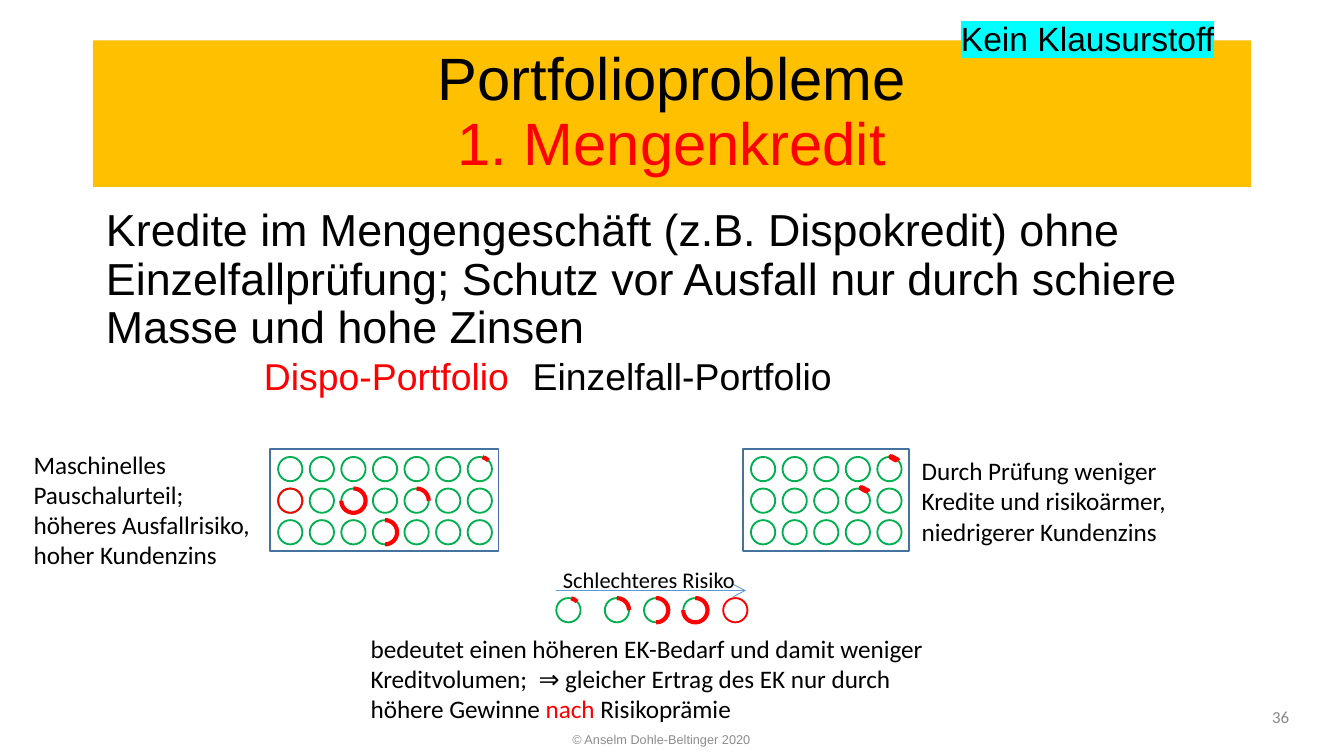
from dataclasses import dataclass
from math import cos, radians, sin

from lxml.etree import SubElement
from pptx import Presentation
from pptx.dml.color import RGBColor
from pptx.enum.shapes import MSO_CONNECTOR, MSO_SHAPE
from pptx.enum.text import MSO_ANCHOR, MSO_AUTO_SIZE, PP_ALIGN
from pptx.oxml.ns import qn
from pptx.util import Pt


@dataclass(frozen=True)
class Theme:
    black: str = "000000"
    red: str = "FF0000"
    green: str = "00B050"
    amber: str = "FFC000"
    cyan: str = "00FFFF"
    frame: str = "43739E"
    arrow: str = "5B9BD5"
    number: str = "898989"
    footer: str = "8C8C8C"
    heading: str = "Arial"
    body: str = "Calibri"
    title_size: float = 32
    lead_size: float = 24
    column_size: float = 20
    badge_size: float = 18
    note_size: float = 13.5
    legend_size: float = 12
    number_size: float = 9
    footer_size: float = 6.8


THEME = Theme()
LOAN = 13
PITCH = 16.92
GRID_TOP = 244.8
RISKS = {"tick": (-77, 32), "quarter": (-90, 90), "half": (-90, 180), "most": (-90, 270)}


class SlideBuilder:
    """Draws styled elements on the current slide, with all lengths in points."""

    def __init__(self, slide, theme):
        self.slide = slide
        self.theme = theme

    def style(self, shape, line=None, weight=1, fill=None):
        shape.shadow.inherit = False
        if fill:
            shape.fill.solid()
            shape.fill.fore_color.rgb = RGBColor.from_string(fill)
        else:
            shape.fill.background()
        if line:
            shape.line.color.rgb = RGBColor.from_string(line)
            shape.line.width = Pt(weight)
        else:
            shape.line.fill.background()
        return shape

    def preset(self, kind, box, **style):
        shape = self.slide.shapes.add_shape(kind, *map(Pt, box))
        return self.style(shape, **style)

    def stroke(self, points, weight):
        start, *rest = [(Pt(x), Pt(y)) for x, y in points]
        builder = self.slide.shapes.build_freeform(*start)
        builder.add_line_segments(rest, close=False)
        self.style(builder.convert_to_shape(), self.theme.red, weight)

    def loan(self, x, y, color):
        self.preset(MSO_SHAPE.OVAL, (x, y, LOAN, LOAN), line=color)

    def risk(self, x, y, level):
        if level == "default":
            self.loan(x, y, self.theme.red)
        elif level == "quarter":
            self.preset(MSO_SHAPE.ARC, (x, y, LOAN, LOAN), line=self.theme.red, weight=2.25)
        else:
            start, sweep = RISKS[level]
            radius = LOAN / 2
            steps = max(4, sweep // 10)
            angles = [radians(start + sweep * step / steps) for step in range(steps + 1)]
            self.stroke([(x + radius + radius * cos(angle), y + radius + radius * sin(angle))
                         for angle in angles], 2.25)

    def portfolio(self, left, columns, frame):
        self.preset(MSO_SHAPE.RECTANGLE, frame, line=self.theme.frame)
        for row in range(3):
            for column in range(columns):
                self.loan(left + column * PITCH, GRID_TOP + row * PITCH, self.theme.green)

    def run(self, paragraph, text, size, color, font, highlight=None):
        run = paragraph.add_run()
        run.text = text
        run.font.size = Pt(size)
        run.font.name = font
        run.font.color.rgb = RGBColor.from_string(color)
        if highlight:
            properties = run.font._element
            mark = SubElement(properties, qn("a:highlight"))
            SubElement(mark, qn("a:srgbClr")).set("val", highlight)
            properties.find(qn("a:solidFill")).addnext(mark)

    def text_box(self, box, grow=False, margins=True, anchor=MSO_ANCHOR.TOP):
        frame = self.slide.shapes.add_textbox(*map(Pt, box)).text_frame
        frame.word_wrap = True
        frame.vertical_anchor = anchor
        if grow:
            frame.auto_size = MSO_AUTO_SIZE.SHAPE_TO_FIT_TEXT
        if not margins:
            frame.margin_left = frame.margin_right = frame.margin_top = frame.margin_bottom = 0
        return frame

    def note(self, box, *runs, size=None, margins=True):
        paragraph = self.text_box(box, True, margins).paragraphs[0]
        for text, color in runs:
            self.run(paragraph, text, size or self.theme.note_size, color, self.theme.body)

    def footer(self, box, text, align, size, color, font):
        paragraph = self.text_box(box, anchor=MSO_ANCHOR.MIDDLE).paragraphs[0]
        paragraph.alignment = align
        self.run(paragraph, text, size, color, font)

    def title(self, box, first, second):
        shape = self.preset(MSO_SHAPE.RECTANGLE, box, fill=self.theme.amber)
        shape.text_frame.vertical_anchor = MSO_ANCHOR.MIDDLE
        paragraph = shape.text_frame.paragraphs[0]
        paragraph.alignment = PP_ALIGN.CENTER
        paragraph.line_spacing = 0.9
        self.run(paragraph, first, self.theme.title_size, self.theme.black, self.theme.heading)
        paragraph.add_line_break()
        self.run(paragraph, second, self.theme.title_size, self.theme.red, self.theme.heading)

    def lead(self, box, text, left_heading, right_heading):
        theme = self.theme
        frame = self.text_box(box)
        paragraph = frame.paragraphs[0]
        paragraph.line_spacing = 0.9
        paragraph.space_before = Pt(5.6)
        self.run(paragraph, text, theme.lead_size, theme.black, theme.heading)
        headings = frame.add_paragraph()
        headings.line_spacing = 0.9
        headings.space_before = Pt(2.8)
        properties = headings._p.get_or_add_pPr()
        properties.set("marL", str(Pt(84.6)))
        properties.set("indent", "0")
        tabs = SubElement(properties, qn("a:tabLst"))
        SubElement(tabs, qn("a:tab"), pos=str(Pt(327.2)), algn="l")
        self.run(headings, left_heading, theme.column_size, theme.red, theme.heading)
        self.run(headings, "\t" + right_heading, theme.column_size, theme.black, theme.heading)

    def arrow(self, start, end):
        connector = self.slide.shapes.add_connector(
            MSO_CONNECTOR.STRAIGHT, *map(Pt, (*start, *end)))
        connector.line.color.rgb = RGBColor.from_string(self.theme.arrow)
        connector.line.width = Pt(0.5)
        SubElement(connector.line._get_or_add_ln(), qn("a:tailEnd")).set("type", "arrow")
        SubElement(connector._element.spPr, qn("a:effectLst"))


def main():
    presentation = Presentation()
    presentation.slide_width, presentation.slide_height = Pt(720), Pt(405)
    slide = presentation.slides.add_slide(presentation.slide_layouts[6])
    draw = SlideBuilder(slide, THEME)
    black, red = THEME.black, THEME.red

    legend = zip((298, 324, 345, 366, 387.4), ("tick", "quarter", "half", "most", "default"))
    for x, level in legend:
        if level != "default":
            draw.loan(x, 320.4, THEME.green)
        draw.risk(x, 320.4, level)
    draw.arrow((298, 316.4), (399.6, 316.4))
    draw.note((294.5, 299.5, 109.4, 21.6), ("Schlechteres Risiko", black), size=THEME.legend_size)
    draw.note((191.5, 335.5, 312.5, 56.2),
              ("bedeutet einen höheren EK-Bedarf und damit weniger Kreditvolumen;  ⇒ gleicher "
               "Ertrag des EK nur durch höhere Gewinne ", black),
              ("nach", red), (" Risikoprämie", black))

    draw.title((49.7, 21.6, 620.6, 78.5), "Portfolioprobleme", "1. Mengenkredit")
    draw.lead((49.7, 108, 620.6, 120.2),
              "Kredite im Mengengeschäft (z.B. Dispokredit) ohne Einzelfallprüfung; Schutz vor "
              "Ausfall nur durch schiere Masse und hohe Zinsen",
              "Dispo-Portfolio", "Einzelfall-Portfolio")

    draw.portfolio(149, 7, (144.7, 240.5, 122.4, 54.7))
    draw.portfolio(402.3, 5, (398.2, 240.5, 88.6, 54.7))
    risky_loans = ((6, 0, "tick"), (0, 1, "default"), (4, 1, "quarter"),
                   (3, 2, "half"), (2, 1, "most"))
    for column, row, level in risky_loans:
        draw.risk(149 + column * PITCH, GRID_TOP + row * PITCH, level)
    for x, y in ((477.4, 244.8), (461.5, 261.4)):
        draw.stroke([(x + dx, y + dy) for dx, dy in
                     ((0.5, 0.2), (1.8, 1), (0, 0), (2.5, 1.4), (1.4, 0.9), (3.2, 1.6), (3.5, 2.2))], 3)

    draw.note((486.7, 240.5, 146.2, 56.2),
              ("Durch Prüfung weniger Kredite und risikoärmer, niedrigerer Kundenzins", black))
    draw.note((18, 240.5, 116.6, 65.5),
              ("Maschinelles Pauschalurteil; höheres Ausfallrisiko, hoher Kundenzins", black),
              margins=False)
    draw.footer((670.3, 373, 27.4, 21.6), "36", PP_ALIGN.RIGHT,
                THEME.number_size, THEME.number, THEME.body)
    draw.footer((232.6, 385.2, 243.4, 21.6), "© Anselm Dohle-Beltinger 2020", PP_ALIGN.CENTER,
                THEME.footer_size, THEME.footer, THEME.heading)
    badge = draw.text_box((514.8, 9.4, 155.5, 21.6), grow=True, margins=False)
    draw.run(badge.paragraphs[0], "Kein Klausurstoff", THEME.badge_size, black,
             THEME.heading, THEME.cyan)
    presentation.save("out.pptx")


if __name__ == "__main__":
    main()
